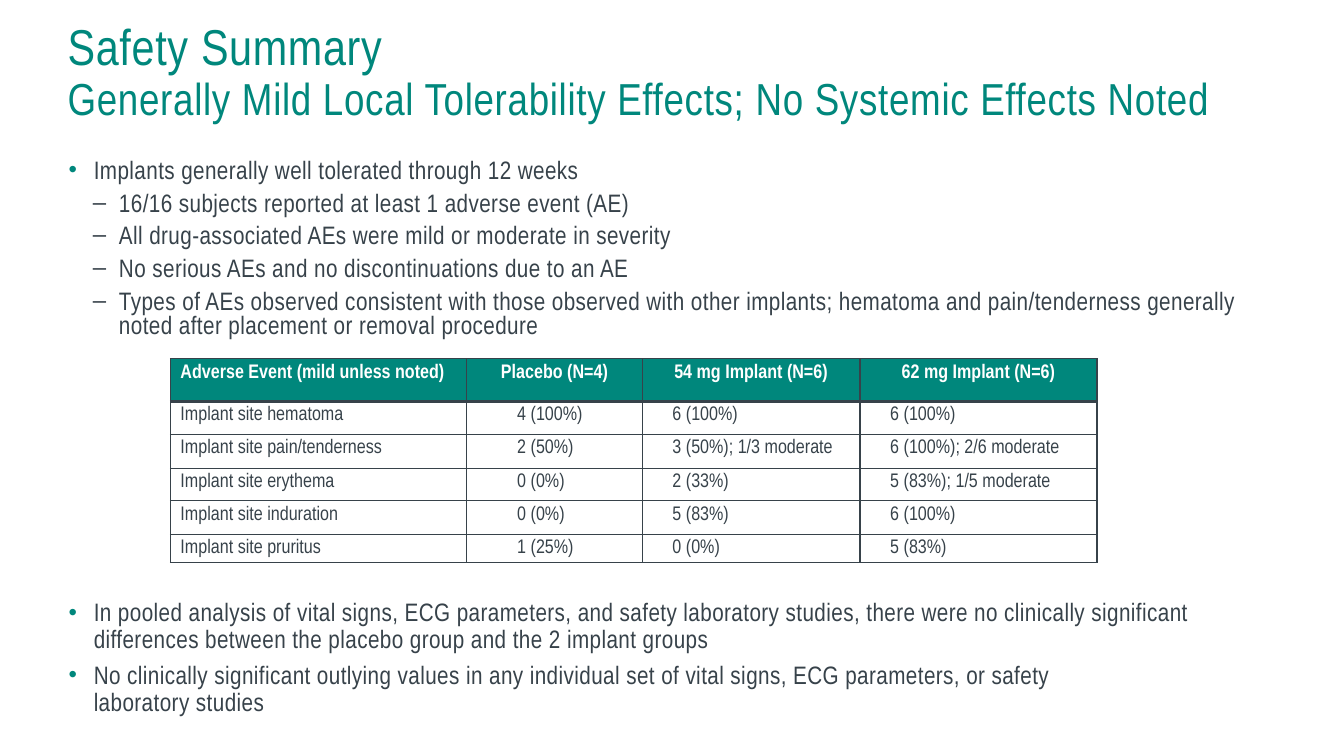
from lxml.etree import SubElement
from pptx import Presentation
from pptx.dml.color import RGBColor
from pptx.enum.text import MSO_ANCHOR, MSO_AUTO_SIZE, PP_ALIGN
from pptx.oxml.ns import qn
from pptx.util import Inches, Pt

TEAL = RGBColor(0x00, 0x87, 0x7C)
SLATE = RGBColor(0x37, 0x42, 0x4A)
WHITE = RGBColor(0xFF, 0xFF, 0xFF)
FACE = "Arial Narrow"

TITLE = [
    ("Safety Summary", 36),
    ("Generally Mild Local Tolerability Effects; No Systemic Effects Noted", 32),
]
# (level, text)
FINDINGS = [
    (0, "Implants generally well tolerated through 12 weeks"),
    (1, "16/16 subjects reported at least 1 adverse event (AE)"),
    (1, "All drug-associated AEs were mild or moderate in severity"),
    (1, "No serious AEs and no discontinuations due to an AE"),
    (1, "Types of AEs observed consistent with those observed with other implants; "
        "hematoma and pain/tenderness generally noted after placement or removal procedure"),
]
LABS = [
    (0, "In pooled analysis of vital signs, ECG parameters, and safety laboratory studies, "
        "there were no clinically significant differences between the placebo group "
        "and the 2 implant groups"),
    (0, "No clinically significant outlying values in any individual set of vital signs, "
        "ECG parameters, or safety\nlaboratory studies"),
]
EVENTS = [
    ("Adverse Event (mild unless noted)", "Placebo (N=4)",
     "54 mg Implant (N=6)", "62 mg Implant (N=6)"),
    ("Implant site hematoma", "4 (100%)", "6 (100%)", "6 (100%)"),
    ("Implant site pain/tenderness", "2 (50%)", "3 (50%); 1/3 moderate", "6 (100%); 2/6 moderate"),
    ("Implant site erythema", "0 (0%)", "2 (33%)", "5 (83%); 1/5 moderate"),
    ("Implant site induration", "0 (0%)", "5 (83%)", "6 (100%)"),
    ("Implant site pruritus", "1 (25%)", "0 (0%)", "5 (83%)"),
]
WIDTHS = [2.94, 1.74, 2.16, 2.35]
HEIGHTS = [0.42, 0.33, 0.34, 0.32, 0.33, 0.17]
INDENTS = [0.1, 0.5, 0.3, 0.3]

# Per level: mark, mark colour, left margin, hanging indent
MARKS = [("•", TEAL, 0.25, 0.25), ("–", SLATE, 0.5, 0.26)]


def place(shape, left, top, width, height):
    spots = {"left": left, "top": top, "width": width, "height": height}
    for name, value in spots.items():
        setattr(shape, name, Inches(value))


def prep(frame):
    """Give a text frame zero margins, wrapping and a top anchor."""
    look = {"margin_left": 0, "margin_top": 0, "margin_right": 0, "margin_bottom": 0,
            "word_wrap": True, "auto_size": MSO_AUTO_SIZE.NONE,
            "vertical_anchor": MSO_ANCHOR.TOP}
    for name, value in look.items():
        setattr(frame, name, value)


def style(run, size, color, bold=False, track=0):
    """Format a run; track is letter spacing in points."""
    for name, value in {"name": FACE, "size": Pt(size), "bold": bold}.items():
        setattr(run.font, name, value)
    run.font.color.rgb = color
    if track:
        run.font._element.set("spc", str(round(track * 100)))


def add_mark(para, level):
    mark, color, left, hang = MARKS[level]
    props = para._p.get_or_add_pPr()
    props.set("marL", str(Inches(left)))
    props.set("indent", str(-Inches(hang)))
    tint = SubElement(props, qn("a:buClr"))
    SubElement(tint, qn("a:srgbClr"), val=str(color))
    SubElement(props, qn("a:buSzPct"), val="95000")
    SubElement(props, qn("a:buFont"), typeface="Arial")
    SubElement(props, qn("a:buChar"), char=mark)


def fill_list(frame, items, lead, first):
    """Write bullets with the given line spacing and top-level space before."""
    prep(frame)
    for i, (level, text) in enumerate(items):
        para = frame.add_paragraph() if i else frame.paragraphs[0]
        para.text = text
        form = {"level": level, "line_spacing": lead, "space_after": Pt(0),
                "space_before": Pt(6 if level else first)}
        for name, value in form.items():
            setattr(para, name, value)
        add_mark(para, level)
        for run in para.runs:
            style(run, 18, SLATE, track=0.3)


def add_edges(cell, row):
    props = cell._tc.get_or_add_tcPr()
    wide = {"lnT": row == 1, "lnB": row == 0}
    for i, side in enumerate(("lnL", "lnR", "lnT", "lnB")):
        width = Pt(2.25 if wide.get(side) else 1)
        line = SubElement(props, qn("a:" + side), w=str(width))
        SubElement(SubElement(line, qn("a:solidFill")), qn("a:srgbClr"), val=str(SLATE))
        props.insert(i, line)


def add_events(slide):
    rows, cols = len(EVENTS), len(WIDTHS)
    frame = slide.shapes.add_table(rows, cols, 0, 0, Inches(9.2), Inches(2.09))
    table = frame.table
    table.horz_banding = False
    for col, width in zip(table.columns, WIDTHS):
        col.width = Inches(width)
    for row, height in zip(table.rows, HEIGHTS):
        row.height = Inches(height)
    for r, texts in enumerate(EVENTS):
        for c, text in enumerate(texts):
            cell = table.cell(r, c)
            cell.text = text
            cell.margin_left = Inches(INDENTS[c] if r else 0.1)
            para = cell.text_frame.paragraphs[0]
            para.alignment = PP_ALIGN.LEFT if r or not c else PP_ALIGN.CENTER
            style(para.runs[0], 14, SLATE if r else WHITE, bold=not r)
            if r:
                cell.fill.background()
            else:
                cell.fill.solid()
                cell.fill.fore_color.rgb = TEAL
            add_edges(cell, r)
    place(frame, 1.69, 3.56, 9.2, 2.09)


def add_title(shape):
    place(shape, 0.67, 0.22, 11.99, 1.26)
    prep(shape.text_frame)
    para = shape.text_frame.paragraphs[0]
    para.alignment = PP_ALIGN.LEFT
    para.line_spacing = 0.9
    for i, (text, size) in enumerate(TITLE):
        if i:
            para.add_line_break()
            gap = para._p.findall(qn("a:br"))[-1]
            SubElement(gap, qn("a:rPr"), sz=str(size * 100))
        run = para.add_run()
        run.text = text
        style(run, size, TEAL, track=0.5)


def main():
    deck = Presentation()
    deck.slide_width, deck.slide_height = Inches(13.33), Inches(7.5)
    slide = deck.slides.add_slide(deck.slide_layouts[1])
    add_title(slide.shapes.title)
    body = slide.placeholders[1]
    place(body, 0.68, 1.59, 11.99, 1.86)
    fill_list(body.text_frame, FINDINGS, 0.8, 12)
    add_events(slide)
    labs = slide.shapes.add_textbox(0, 0, 0, 0)
    place(labs, 0.68, 5.95, 11.99, 1.43)
    fill_list(labs.text_frame, LABS, 0.9, 6)
    deck.save("out.pptx")


if __name__ == "__main__":
    main()
